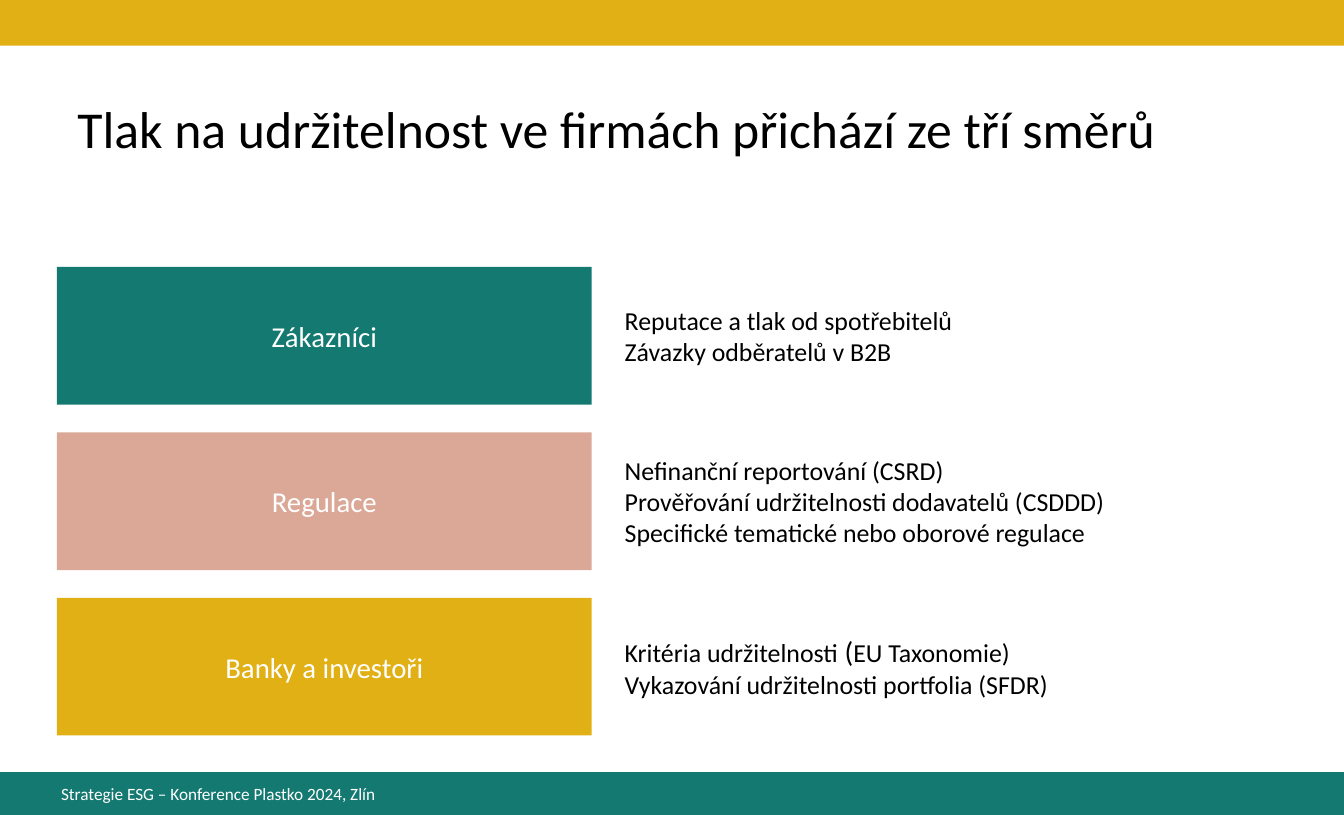
"""Build the slide on the three sources of sustainability pressure on firms."""
from pptx import Presentation
from pptx.dml.color import RGBColor
from pptx.enum.shapes import MSO_SHAPE as Shape
from pptx.enum.text import MSO_ANCHOR as Anchor, PP_ALIGN as Align
from pptx.util import Cm, Pt

TITLE = "Tlak na udržitelnost ve firmách přichází ze tří směrů"
FOOTER = "Strategie ESG – Konference Plastko 2024, Zlín"
DIRECTIONS = [
    ("Zákazníci", "teal", [
        [("Reputace a tlak od spotřebitelů", "body")],
        [("Závazky odběratelů v B2B", "body")],
    ]),
    ("Regulace", "rose", [
        [("Nefinanční reportování (CSRD)", "body")],
        [("Prověřování udržitelnosti dodavatelů (CSDDD)", "body")],
        [("Specifické tematické nebo oborové regulace", "body")],
    ]),
    ("Banky a investoři", "gold", [
        [("Kritéria udržitelnosti", "body"), (" (", "label"), ("EU Taxonomie)", "body")],
        [("Vykazování udržitelnosti portfolia (SFDR)", "body")],
    ]),
]

THEME = {
    "font": "Calibri",
    "colors": {"teal": "147970", "rose": "DBA898", "gold": "E1B015",
               "white": "FFFFFF", "black": "000000"},
    "sizes": {"title": 36, "label": 20, "body": 18, "footer": 12},
}
PAGE_WIDTH, PAGE_HEIGHT = 33, 20
BAR_HEIGHT, FOOTER_TOP = 1.12, 18.95
LEFT, FIRST_TOP = 1.4, 6.55
BOX_WIDTH, BOX_HEIGHT, BOX_GAP = 13.13, 3.38, 0.68
DETAIL_LEFT, DETAIL_WIDTH = 15.09, 14


def color(name):
    return RGBColor.from_string(THEME["colors"][name])


def add_box(page, area, fill):
    box = page.shapes.add_shape(Shape.RECTANGLE, *map(Cm, area))
    box.shadow.inherit = False
    box.fill.solid()
    box.fill.fore_color.rgb = color(fill)
    box.line.fill.background()
    return box


def write(box, lines, ink, align=Align.LEFT, spacing=1.0, **frame_format):
    frame = box.text_frame
    values = {"word_wrap": True, "vertical_anchor": Anchor.MIDDLE, **frame_format}
    for name, value in values.items():
        setattr(frame, name, value)
    for index, line in enumerate(lines):
        para = frame.add_paragraph() if index else frame.paragraphs[0]
        para.alignment, para.line_spacing = align, spacing
        for text, size in line:
            span = para.add_run()
            span.text = text
            span.font.name = THEME["font"]
            span.font.size = Pt(THEME["sizes"][size])
            span.font.color.rgb = color(ink)


def add_text(page, area, lines, ink, **text_format):
    write(page.shapes.add_textbox(*map(Cm, area)), lines, ink, **text_format)


def main():
    deck = Presentation()
    deck.slide_width, deck.slide_height = Cm(PAGE_WIDTH), Cm(PAGE_HEIGHT)
    page = deck.slides.add_slide(deck.slide_layouts[6])

    add_box(page, (0, FOOTER_TOP, PAGE_WIDTH, PAGE_HEIGHT - FOOTER_TOP), "teal")
    add_box(page, (0, 0, PAGE_WIDTH, BAR_HEIGHT), "gold")
    add_text(page, (LEFT, 19.23, 10.82, 0.51), [[(FOOTER, "footer")]], "white",
             margin_left=Cm(0.1), margin_right=Cm(0.1), margin_top=0, margin_bottom=0,
             vertical_anchor=Anchor.TOP)
    add_text(page, (LEFT, 1.65, 28.47, 3.18), [[(TITLE, "title")]], "black",
             spacing=0.9, margin_left=Cm(0.5), margin_right=Cm(0.5),
             margin_top=Cm(0.25), margin_bottom=Cm(0.25))

    for row, (label, fill, details) in enumerate(DIRECTIONS):
        top = FIRST_TOP + row * (BOX_HEIGHT + BOX_GAP)
        box = add_box(page, (LEFT, top, BOX_WIDTH, BOX_HEIGHT), fill)
        write(box, [[(label, "label")]], "white", align=Align.CENTER)
        add_text(page, (DETAIL_LEFT, top, DETAIL_WIDTH, BOX_HEIGHT), details, "black")

    deck.save("out.pptx")


if __name__ == "__main__":
    main()
